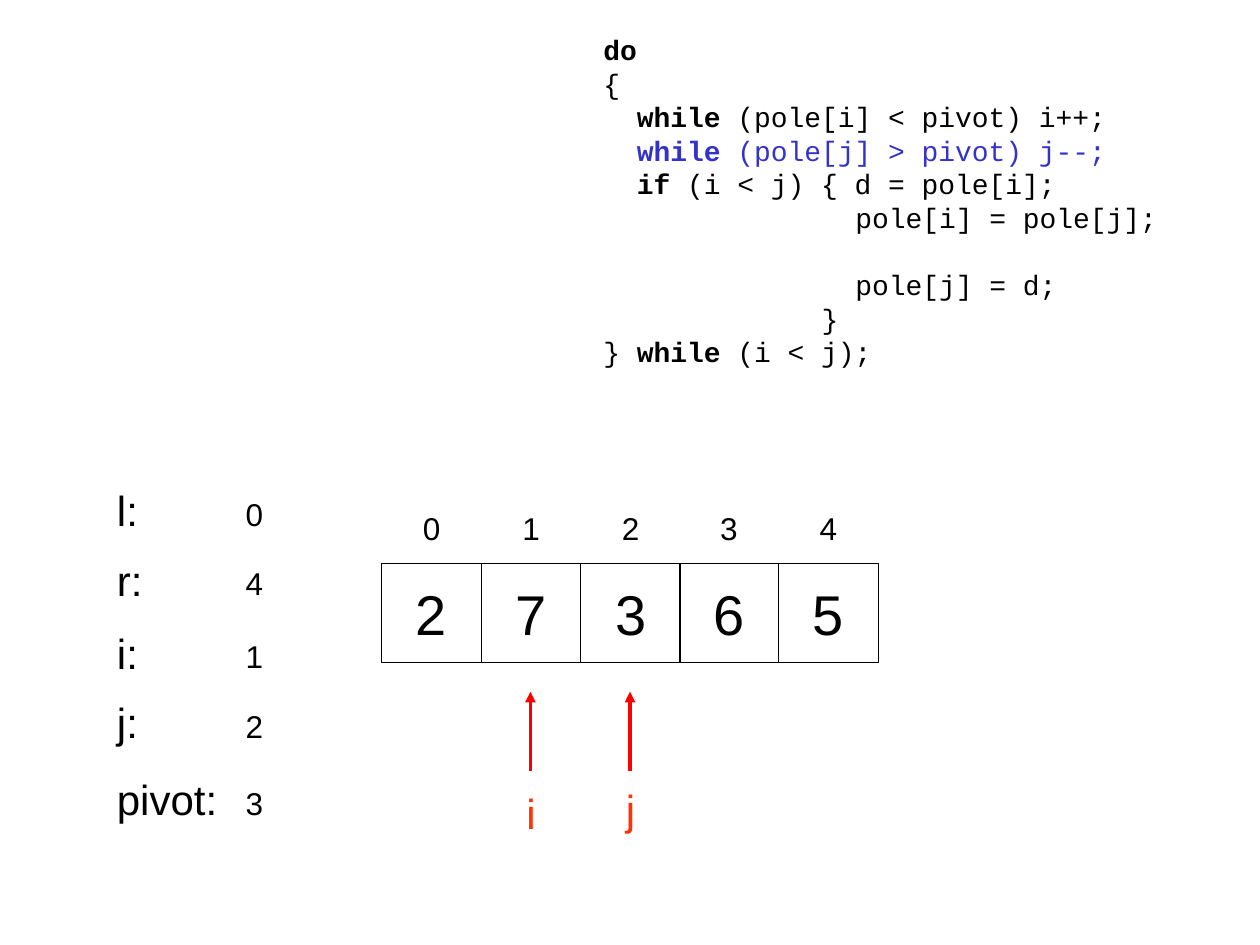
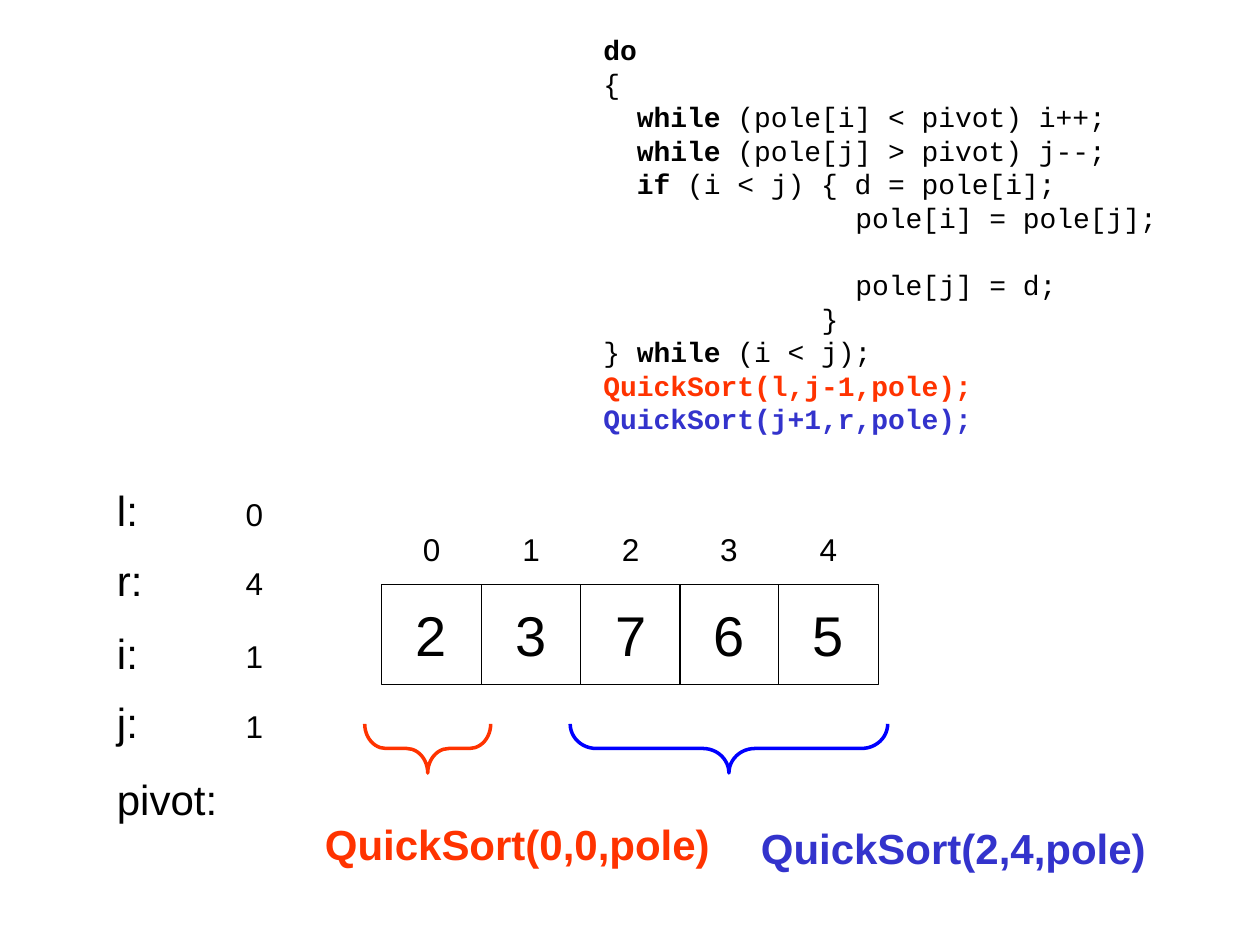
"""Build two slides that trace the partition step of QuickSort."""
from dataclasses import dataclass, replace

from lxml import etree
from pptx import Presentation
from pptx.dml.color import RGBColor
from pptx.enum.shapes import MSO_CONNECTOR, MSO_SHAPE
from pptx.enum.text import MSO_ANCHOR, PP_ALIGN
from pptx.oxml.ns import qn
from pptx.shapes.autoshape import Shape
from pptx.slide import Slide
from pptx.text.text import _Paragraph
from pptx.util import Pt

RECTANGLE, BRACE = MSO_SHAPE.RECTANGLE, MSO_SHAPE.LEFT_BRACE
STRAIGHT = MSO_CONNECTOR.STRAIGHT
LEFT, CENTER = PP_ALIGN.LEFT, PP_ALIGN.CENTER
TOP, MIDDLE = MSO_ANCHOR.TOP, MSO_ANCHOR.MIDDLE

COLORS = {
    "ink": "000000",
    "arrow": "FF0000",
    "left": "FF3300",
    "right": "3333CC",
    "right_brace": "0000FF",
}
SANS, MONO = "Arial", "Courier New"
EMU_PER_PX = 9144
CODE_SIZE = 16
CODE_CHARACTER = Pt(9.6)
CODE_LINE = Pt(19.2)
CELL_LEFT, CELL_SIZE, CELL_PITCH = 303, 79, 78.8
VARIABLE_TOPS = {"l": 380, "r": 435, "i": 493, "j": 548, "pivot": 609}


@dataclass(frozen=True)
class Box:
    """Frame of an object in px."""
    left: int
    top: int
    width: int
    height: int

    def emu(self) -> tuple[int, int, int, int]:
        """Return the frame in EMU."""
        return px(self.left), px(self.top), px(self.width), px(self.height)


@dataclass(frozen=True)
class TextStyle:
    """Look of one run of text."""
    size: int
    color: str = "ink"
    font: str = SANS
    bold: bool = False


@dataclass(frozen=True)
class CodeLine:
    """Line of code with a bold keyword between plain parts."""
    before: str = ""
    keyword: str = ""
    after: str = ""
    indent: int = 0
    color: str = "ink"
    gap_above: bool = False


@dataclass(frozen=True)
class Pointer:
    """Arrow that points up at an array cell."""
    name: str
    cell: int
    label_top: int


@dataclass(frozen=True)
class Call:
    """Recursive call with the brace over its part of the array."""
    text: str
    text_box: Box
    color: str
    brace_box: Box
    brace_color: str
    adjustments: tuple[float, float]


@dataclass(frozen=True)
class Step:
    """Everything one slide shows."""
    cells: str
    array_top: int
    variables: dict[str, str]
    code: tuple[CodeLine, ...]
    code_height: int
    pointers: tuple[Pointer, ...] = ()
    calls: tuple[Call, ...] = ()


LOOP = (
    CodeLine(keyword="do"),
    CodeLine("{"),
    CodeLine(keyword="while", after=" (pole[i] < pivot) i++;", indent=2),
    CodeLine(keyword="while", after=" (pole[j] > pivot) j--;", indent=2),
    CodeLine(keyword="if", after=" (i < j) { d = pole[i];", indent=2),
    CodeLine("pole[i] = pole[j];", indent=15),
    CodeLine("pole[j] = d;", indent=15, gap_above=True),
    CodeLine("}", indent=13),
    CodeLine("} ", "while", " (i < j);"),
)
RECURSION = (
    CodeLine(keyword="QuickSort(l,j-1,pole);", color="left"),
    CodeLine(keyword="QuickSort(j+1,r,pole);", color="right"),
)
STEPS = (
    Step(
        cells="27365",
        array_top=447,
        variables={"l": "0", "r": "4", "i": "1", "j": "2", "pivot": "3"},
        code=(*LOOP[:3], replace(LOOP[3], color="right"), *LOOP[4:]),
        code_height=251,
        pointers=(Pointer("i", 1, 620), Pointer("j", 2, 617)),
    ),
    Step(
        cells="23765",
        array_top=464,
        variables={"l": "0", "r": "4", "i": "1", "j": "1", "pivot": ""},
        code=LOOP + RECURSION,
        code_height=304,
        calls=(
            Call("QuickSort(0,0,pole)", Box(248, 645, 331, 50), "left",
                 Box(320, 544, 39, 100), "left", (0.43, 0.5)),
            Call("QuickSort(2,4,pole)", Box(594, 648, 331, 50), "right",
                 Box(559, 468, 39, 252), "right_brace", (0.53, 0.5)),
        ),
    ),
)


def px(length: int) -> int:
    """Turn px into EMU."""
    return length * EMU_PER_PX


def rgb(color: str) -> RGBColor:
    """Look up a named colour."""
    return RGBColor.from_string(COLORS[color])


def cell_left(index: int) -> int:
    """Return the left edge of an array cell."""
    return CELL_LEFT + round(index * CELL_PITCH)


def add_run(paragraph: _Paragraph, text: str, style: TextStyle) -> None:
    """Add one styled run."""
    run = paragraph.add_run()
    run.text = text
    run.font.name = style.font
    run.font.size = Pt(style.size)
    run.font.bold = style.bold
    run.font.color.rgb = rgb(style.color)


def add_text(slide: Slide, text: str, box: Box, style: TextStyle, align: PP_ALIGN = LEFT) -> None:
    """Add a text box with one paragraph."""
    frame = slide.shapes.add_textbox(*box.emu()).text_frame
    frame.word_wrap = True
    frame.vertical_anchor = TOP
    paragraph = frame.paragraphs[0]
    paragraph.alignment = align
    paragraph.space_before = Pt(style.size / 2)
    add_run(paragraph, text, style)


def add_outline(slide: Slide, kind: MSO_SHAPE, box: Box, color: str, width: float) -> Shape:
    """Add an unfilled preset shape."""
    shape = slide.shapes.add_shape(kind, *box.emu())
    shape.shadow.inherit = False
    shape.fill.background()
    shape.line.color.rgb = rgb(color)
    shape.line.width = Pt(width)
    return shape


def add_array(slide: Slide, cells: str, top: int) -> None:
    """Draw the array cells with their indexes above."""
    for index, value in enumerate(cells):
        box = Box(cell_left(index), top, CELL_SIZE, CELL_SIZE)
        cell = add_outline(slide, RECTANGLE, box, "ink", 0.75)
        frame = cell.text_frame
        frame.word_wrap = False
        frame.vertical_anchor = MIDDLE
        frame.paragraphs[0].alignment = CENTER
        add_run(frame.paragraphs[0], value, TextStyle(32))
        add_text(slide, str(index), replace(box, top=top - 48, height=39), TextStyle(18), CENTER)


def add_variables(slide: Slide, variables: dict[str, str]) -> None:
    """List the variables with their values."""
    for name, value in variables.items():
        top = VARIABLE_TOPS[name]
        add_text(slide, f"{name}:", Box(83, top, 110, 50), TextStyle(24))
        if value:
            add_text(slide, value, Box(185, top + 8, 39, 40), TextStyle(18))


def add_pointer(slide: Slide, pointer: Pointer) -> None:
    """Draw a labelled arrow under an array cell."""
    center = cell_left(pointer.cell) + CELL_SIZE // 2
    arrow = slide.shapes.add_connector(STRAIGHT, px(center), px(612), px(center), px(549))
    arrow.line.color.rgb = rgb("arrow")
    arrow.line.width = Pt(2)
    properties = arrow._element.spPr
    etree.SubElement(properties.find(qn("a:ln")), qn("a:tailEnd"), type="triangle")
    etree.SubElement(properties, qn("a:effectLst"))
    label_box = Box(center - 23, pointer.label_top, 47, 50)
    add_text(slide, pointer.name, label_box, TextStyle(24, "left"), CENTER)


def add_call(slide: Slide, call: Call) -> None:
    """Draw a brace and the call it stands for."""
    brace = add_outline(slide, BRACE, call.brace_box, call.brace_color, 2)
    brace.rotation = 270
    for index, value in enumerate(call.adjustments):
        brace.adjustments[index] = value
    add_text(slide, call.text, call.text_box, TextStyle(24, call.color, bold=True))


def add_code(slide: Slide, lines: tuple[CodeLine, ...], height: int) -> None:
    """Write the code listing."""
    frame = slide.shapes.add_textbox(*Box(469, 21, 500, height).emu()).text_frame
    frame.word_wrap = True
    for number, line in enumerate(lines):
        paragraph = frame.add_paragraph() if number else frame.paragraphs[0]
        paragraph.line_spacing = CODE_LINE
        paragraph.space_before = CODE_LINE if line.gap_above else Pt(0)
        paragraph._p.get_or_add_pPr().set("marL", str(line.indent * CODE_CHARACTER))
        plain = TextStyle(CODE_SIZE, line.color, MONO)
        bold = replace(plain, bold=True)
        for text, style in ((line.before, plain), (line.keyword, bold), (line.after, plain)):
            if text:
                add_run(paragraph, text, style)


def main() -> None:
    """Build and save the presentation."""
    presentation = Presentation()
    presentation.slide_width, presentation.slide_height = px(1000), px(750)
    for step in STEPS:
        slide = presentation.slides.add_slide(presentation.slide_layouts[6])
        add_array(slide, step.cells, step.array_top)
        add_variables(slide, step.variables)
        for pointer in step.pointers:
            add_pointer(slide, pointer)
        for call in step.calls:
            add_call(slide, call)
        add_code(slide, step.code, step.code_height)
    presentation.save("out.pptx")


if __name__ == "__main__":
    main()
